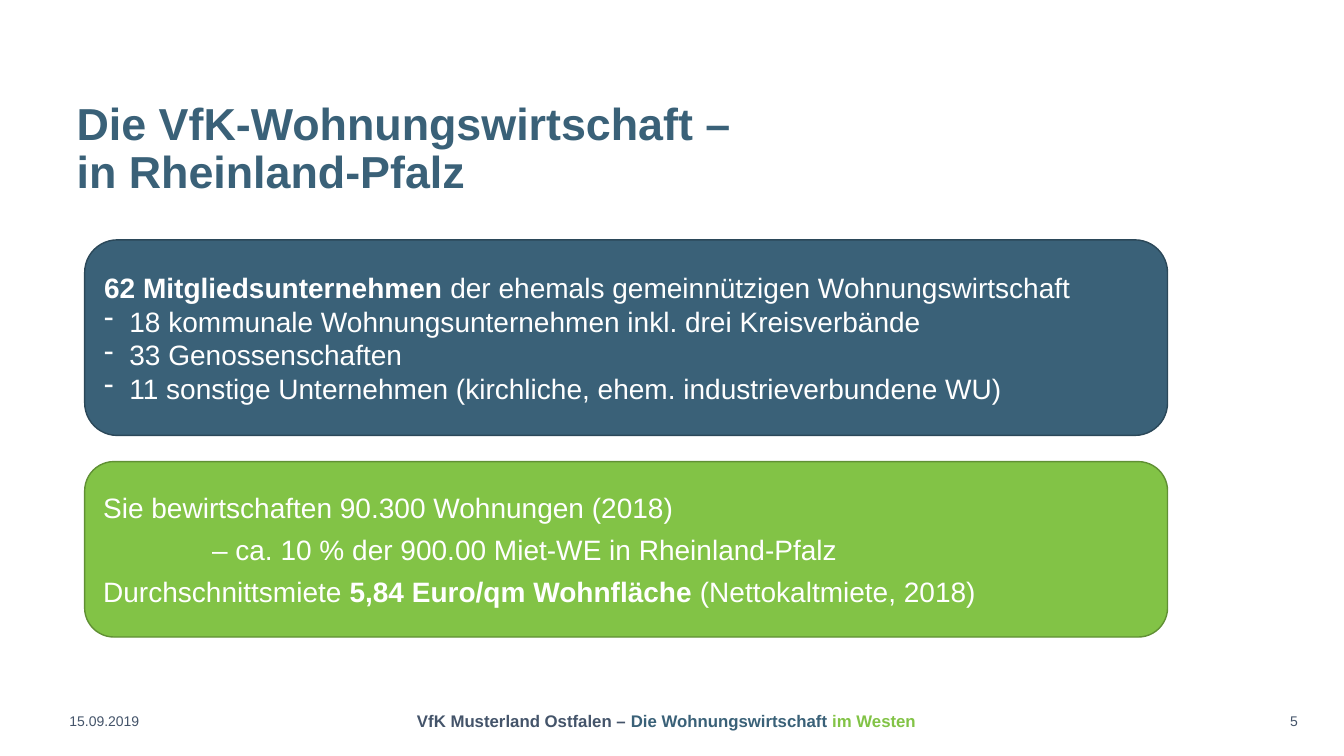
from lxml import etree
from pptx import Presentation
from pptx.dml.color import RGBColor
from pptx.enum.shapes import MSO_SHAPE
from pptx.enum.text import MSO_ANCHOR, MSO_AUTO_SIZE, PP_ALIGN
from pptx.oxml.ns import qn
from pptx.util import Emu, Pt

ROUNDED = MSO_SHAPE.ROUNDED_RECTANGLE
MIDDLE, BOTTOM = MSO_ANCHOR.MIDDLE, MSO_ANCHOR.BOTTOM
LEFT, CENTER, RIGHT = PP_ALIGN.LEFT, PP_ALIGN.CENTER, PP_ALIGN.RIGHT
NO_AUTOFIT = MSO_AUTO_SIZE.NONE

BLUE = RGBColor(0x3A, 0x61, 0x78)
DARK_BLUE = RGBColor(0x2B, 0x48, 0x59)
GREEN = RGBColor(0x82, 0xC3, 0x46)
DARK_GREEN = RGBColor(0x60, 0x90, 0x34)
SLATE = RGBColor(0x44, 0x54, 0x6A)
WHITE = RGBColor(0xFF, 0xFF, 0xFF)

EMU_PER_PX = 9144  # 100 px to the inch
TITLE_ONLY = 5


def px(length):
    return Emu(length * EMU_PER_PX)


class SlideBuilder:
    font = "Arial"

    def __init__(self, deck):
        self.page = deck.slides.add_slide(deck.slide_layouts[TITLE_ONLY])

    def add_span(self, para, text, size, color, bold=False):
        span = para.add_run()
        span.text = text
        span.font.name = self.font
        span.font.size = Pt(size)
        span.font.color.rgb = color
        span.font.bold = bold

    def set_frame(self, shape, anchor):
        frame = shape.text_frame
        frame.word_wrap = True
        frame.auto_size = NO_AUTOFIT
        frame.vertical_anchor = anchor
        return frame

    def indent(self, para, margin, bullet=None):
        properties = para._p.get_or_add_pPr()
        properties.set("marL", str(px(margin)))
        properties.set("indent", str(-px(margin) if bullet else 0))
        if bullet:
            etree.SubElement(properties, qn("a:buChar")).set("char", bullet)

    def title(self, left, top, width, height, lines):
        title = self.page.shapes.title
        title.left, title.top = px(left), px(top)
        title.width, title.height = px(width), px(height)
        para = self.set_frame(title, BOTTOM).paragraphs[0]
        para.alignment = LEFT
        para.line_spacing = 0.9
        for number, line in enumerate(lines):
            if number:
                para.add_line_break()
            self.add_span(para, line, 32, BLUE, bold=True)

    def footer(self, left, width, align, size, spans, bold=False):
        box = self.page.shapes.add_textbox(px(left), px(695), px(width), px(40))
        para = self.set_frame(box, MIDDLE).paragraphs[0]
        para.alignment = align
        for text, color in spans:
            self.add_span(para, text, size, color, bold)

    def card(self, top, height, fill, line, rows, space_before=0):
        """Each row is (margin, bullet, spans); each span is (text, bold)."""
        box = self.page.shapes.add_shape(ROUNDED, px(84), px(top), px(1074), px(height))
        box.shadow.inherit = False
        box.fill.solid()
        box.fill.fore_color.rgb = fill
        box.line.color.rgb = line
        box.line.width = Pt(1)
        frame = self.set_frame(box, MIDDLE)
        for number, (margin, bullet, spans) in enumerate(rows):
            para = frame.add_paragraph() if number else frame.paragraphs[0]
            para.alignment = LEFT
            para.space_before = Pt(space_before)
            self.indent(para, margin, bullet)
            for text, bold in spans:
                self.add_span(para, text, 20, WHITE, bold)


def main():
    deck = Presentation()
    deck.slide_width, deck.slide_height = px(1333), px(750)
    slide = SlideBuilder(deck)

    # Title
    slide.title(66, 38, 1030, 164, ["Die VfK-Wohnungswirtschaft – ", "in Rheinland-Pfalz"])

    # Members
    member_groups = [
        "18 kommunale Wohnungsunternehmen inkl. drei Kreisverbände",
        "33 Genossenschaften",
        "11 sonstige Unternehmen (kirchliche, ehem. industrieverbundene WU)",
    ]
    members = [(0, None, [("62 Mitgliedsunternehmen ", True),
                          ("der ehemals gemeinnützigen Wohnungswirtschaft", False)])]
    members += [(25, "-", [(group, False)]) for group in member_groups]
    slide.card(238, 194, BLUE, DARK_BLUE, members)

    # Housing stock and rent
    housing = [
        (0, None, [("Sie bewirtschaften 90.300 Wohnungen (2018)", False)]),
        (108, None, [("– ca. 10 % der 900.00 Miet-WE in Rheinland-Pfalz", False)]),
        (0, None, [("Durchschnittsmiete ", False),
                   ("5,84 Euro/qm Wohnfläche", True),
                   (" (Nettokaltmiete, 2018)", False)]),
    ]
    slide.card(458, 174, GREEN, DARK_GREEN, housing, space_before=6)

    # Footer
    slide.footer(59, 103, LEFT, 10, [("15.09.2019", SLATE)])
    slide.footer(379, 564, CENTER, 12, [
        ("VfK Musterland Ostfalen – ", SLATE),
        ("Die Wohnungswirtschaft ", BLUE),
        ("im Westen", GREEN),
    ], bold=True)
    slide.footer(1204, 93, RIGHT, 10, [("5", SLATE)])

    deck.save("out.pptx")


if __name__ == "__main__":
    main()
